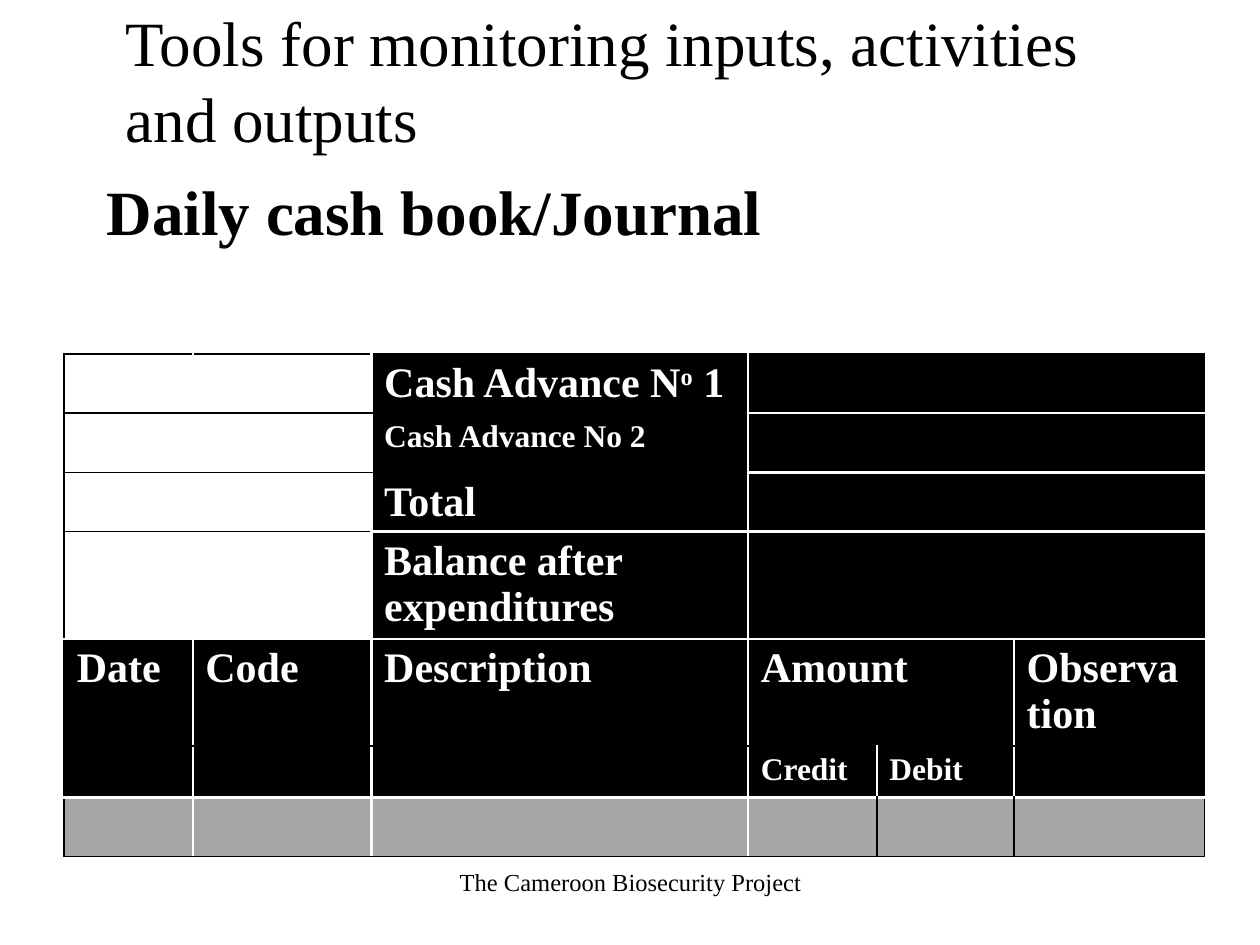
from lxml import etree
from pptx import Presentation
from pptx.dml.color import RGBColor
from pptx.enum.text import MSO_ANCHOR, PP_ALIGN
from pptx.oxml.ns import qn
from pptx.util import Inches, Pt

BOTTOM, TOP = MSO_ANCHOR.BOTTOM, MSO_ANCHOR.TOP
LEFT, CENTER = PP_ALIGN.LEFT, PP_ALIGN.CENTER
COLORS = {"black": "000000", "white": "FFFFFF", "gray": "A6A6A6"}
LINES = {"K": ("black", 1), "W": ("white", 1.5)}
COLUMN_WIDTHS = [1.02, 1.42, 2.99, 1.02, 1.09, 1.51]
ROW_HEIGHTS = [0.47, 0.47, 0.47, 0.84, 0.83, 0.41, 0.47]
SPANS = {(0, 3): 3, (1, 3): 3, (2, 3): 3, (3, 3): 3, (4, 3): 2}
HORIZONTAL_RULES = ["KKKKKK", "KKKWWW", "KKKWWW", "KKWWWW",
                    "WWWWWW", "KKKKKK", "WWWWWW", "KKKKKK"]
VERTICAL_RULES = ["KWWWWWK"] * 6 + ["KWWWKKK"]
LABELS = {
    (0, 2): (24, [("Cash Advance N", 0), ("o", 30000), (" 1", 0)]),
    (1, 2): (18, [("Cash Advance No 2", 0)]),
    (2, 2): (24, [("Total", 0)]),
    (3, 2): (24, [("Balance after expenditures", 0)]),
    (4, 0): (24, [("Date", 0)]),
    (4, 1): (24, [("Code", 0)]),
    (4, 2): (24, [("Description", 0)]),
    (4, 3): (24, [("Amount", 0)]),
    (4, 5): (24, [("Observation", 0)]),
    (5, 3): (18, [("Credit", 0)]),
    (5, 4): (18, [("Debit", 0)]),
}


class SlideBuilder:
    """Holds the style and the current slide, and adds its elements."""

    font_name = "Times New Roman"

    def __init__(self, slide):
        self.slide = slide

    def span(self, para, text, size, color, bold=False, baseline=0):
        span = para.add_run()
        span.text = text
        style = {"name": self.font_name, "size": Pt(size), "bold": bold}
        for key, value in style.items():
            setattr(span.font, key, value)
        span.font.color.rgb = RGBColor.from_string(COLORS[color])
        if baseline:
            span._r.get_or_add_rPr().set("baseline", str(baseline))

    def text(self, text, bounds, size, bold=False, anchor=BOTTOM, align=LEFT):
        box = self.slide.shapes.add_textbox(*map(Inches, bounds))
        for key, value in {"word_wrap": True, "vertical_anchor": anchor}.items():
            setattr(box.text_frame, key, value)
        para = box.text_frame.paragraphs[0]
        para.alignment = align
        self.span(para, text, size, "black", bold)

    def border(self, cell, side, rule):
        color, width = LINES[rule]
        line = etree.SubElement(cell._tc.get_or_add_tcPr(), qn(f"a:ln{side}"), w=str(Pt(width)))
        fill = etree.SubElement(line, qn("a:solidFill"))
        etree.SubElement(fill, qn("a:srgbClr"), val=COLORS[color])

    def cell(self, table, row, column):
        cell = table.cell(row, column)
        cell.margin_bottom = 0
        if cell.is_spanned:
            return
        end = column + SPANS.get((row, column), 1)
        self.border(cell, "L", VERTICAL_RULES[row][column])
        self.border(cell, "R", VERTICAL_RULES[row][end])
        self.border(cell, "T", HORIZONTAL_RULES[row][column])
        self.border(cell, "B", HORIZONTAL_RULES[row + 1][column])
        if row < 4 and column < 2:
            cell.fill.background()
        else:
            cell.fill.solid()
            color = "gray" if row == 6 else "black"
            cell.fill.fore_color.rgb = RGBColor.from_string(COLORS[color])
        size, spans = LABELS.get((row, column), (18, []))
        for text, baseline in spans:
            self.span(cell.text_frame.paragraphs[0], text, size, "white", True, baseline)

    def table(self, left, top):
        rows, columns = len(ROW_HEIGHTS), len(COLUMN_WIDTHS)
        bounds = (left, top, sum(COLUMN_WIDTHS), sum(ROW_HEIGHTS))
        table = self.slide.shapes.add_table(rows, columns, *map(Inches, bounds)).table
        for key in ("first_row", "horz_banding"):
            setattr(table, key, False)
        for column, width in zip(table.columns, COLUMN_WIDTHS):
            column.width = Inches(width)
        for row, height in zip(table.rows, ROW_HEIGHTS):
            row.height = Inches(height)
        for (row, column), span in SPANS.items():
            table.cell(row, column).merge(table.cell(row, column + span - 1))
        for row in range(rows):
            for column in range(columns):
                self.cell(table, row, column)


def main():
    deck = Presentation()
    deck.slide_width, deck.slide_height = Inches(10), Inches(7.5)
    page = SlideBuilder(deck.slides.add_slide(deck.slide_layouts[6]))
    page.text("The Cameroon Biosecurity Project", (3.42, 6.83, 3.17, 0.52), 14,
              anchor=TOP, align=CENTER)
    page.text("Daily cash book/Journal", (0.75, 1.5, 8.21, 0.52), 36, bold=True)
    page.text("Tools for monitoring inputs, activities and outputs",
              (0.9, 0.76, 8.21, 0.52), 36)
    page.table(0.51, 2.81)
    deck.save("out.pptx")


if __name__ == "__main__":
    main()
